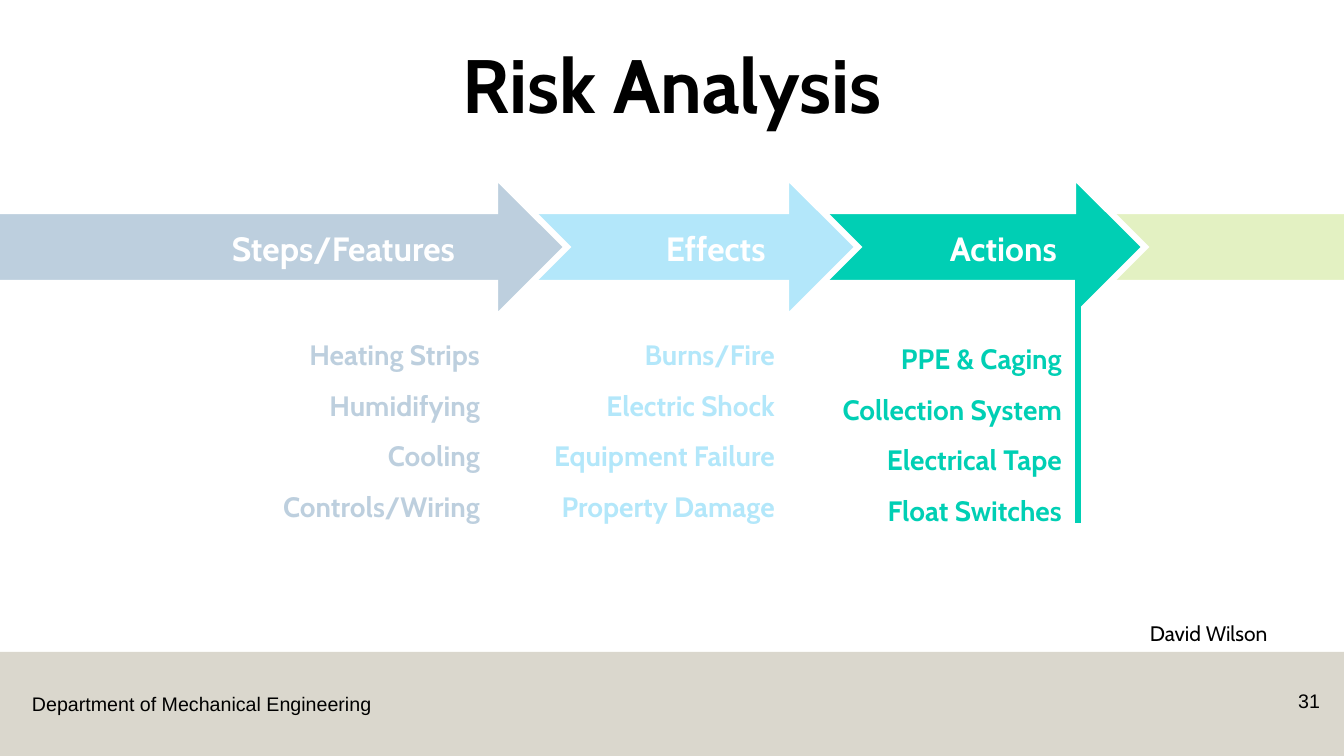
from lxml.etree import SubElement
from pptx import Presentation
from pptx.dml.color import RGBColor
from pptx.enum.shapes import MSO_CONNECTOR, MSO_SHAPE
from pptx.enum.text import MSO_ANCHOR, MSO_AUTO_SIZE, PP_ALIGN
from pptx.oxml.ns import qn
from pptx.util import Emu, Pt

NAVY, BLUE, TEAL, LIME = "236192", "00B0F0", "00CFB4", "A4D233"
WHITE, BLACK, STONE = "FFFFFF", "000000", "B7B09C"
TITLE = "Risk Analysis"

# Arrows and white veils, back to front: left, width, colour, opacity
ARROWS = [
    (879, 582, LIME, 100),
    (722, 423, TEAL, 100),
    (368, 490, BLUE, 100),
    (526, 333, WHITE, 70),
    (-15, 582, NAVY, 100),
    (-17, 582, WHITE, 70),
]
ARROW_TOP, ARROW_HEIGHT = 175, 144
LIME_VEIL = (1104, 183, 269, 132)
LIST_VEIL = (195, 328, 588, 228)
FOOTER_BAND = (0, 652, 1344, 104)

# Placeholder index, area, colour, lines
LISTS = [
    (1, (188, 316, 302, 207), NAVY,
     ["Heating Strips", "Humidifying", "Cooling", "Controls/Wiring"]),
    (2, (505, 316, 280, 207), BLUE,
     ["Burns/Fire", "Electric Shock", "Equipment Failure", "Property Damage"]),
    (3, (770, 320, 302, 207), TEAL,
     ["PPE & Caging", "Collection System", "Electrical Tape", "Float Switches"]),
]
HEADINGS = [("Steps/Features", 222), ("Effects", 656), ("Actions", 940)]


def px(length):
    return Emu(round(length * 12192000 / 1344))


def color(value):
    return RGBColor.from_string(value)


def place(shape, area):
    shape.left, shape.top, shape.width, shape.height = map(px, area)


def style(paragraph, size, value, font="Cabin", bold=False,
          align=PP_ALIGN.LEFT, spacing=1.0):
    paragraph.alignment = align
    paragraph.line_spacing = spacing
    paragraph.space_before = paragraph.space_after = Pt(0)
    paragraph.font.name = font
    paragraph.font.size = Pt(size)
    paragraph.font.bold = bold
    paragraph.font.color.rgb = color(value)


def add_block(page, kind, area, fill, opacity=100, outline=0):
    """Add a filled shape; outline is the width of its white border in points."""
    shape = page.shapes.add_shape(kind, *map(px, area))
    shape.shadow.inherit = False
    shape.fill.solid()
    shape.fill.fore_color.rgb = color(fill)
    if opacity < 100:
        tint = shape.fill._xPr.find(".//" + qn("a:srgbClr"))
        SubElement(tint, qn("a:alpha"), val=str(opacity * 1000))
    if outline:
        shape.line.color.rgb = color(WHITE)
        shape.line.width = Pt(outline)
        SubElement(shape.line._ln, qn("a:miter"), lim="800000")
    else:
        shape.line.fill.background()


def add_text(page, text, area, size, value, **options):
    frame = page.shapes.add_textbox(*map(px, area)).text_frame
    frame.word_wrap = True
    frame.text = text
    style(frame.paragraphs[0], size, value, **options)


def fill_title(page):
    title = page.shapes.title
    place(title, (155, -8, 1034, 143))
    frame = title.text_frame
    frame.text = TITLE
    frame.auto_size = MSO_AUTO_SIZE.NONE
    frame.vertical_anchor = MSO_ANCHOR.BOTTOM
    style(frame.paragraphs[0], 54, BLACK, bold=True,
          align=PP_ALIGN.CENTER, spacing=0.9)


def fill_list(holder, area, value, lines):
    place(holder, area)
    frame = holder.text_frame
    frame.text = "\n".join(lines)
    frame.auto_size = MSO_AUTO_SIZE.NONE
    frame.vertical_anchor = MSO_ANCHOR.TOP
    for paragraph in frame.paragraphs:
        properties = paragraph._p.get_or_add_pPr()
        properties.set("marL", "0")
        properties.set("indent", "0")
        SubElement(properties, qn("a:buNone"))
        style(paragraph, 20, value, bold=True,
              align=PP_ALIGN.RIGHT, spacing=1.5)


def add_teal_rule(page):
    rule = page.shapes.add_connector(
        MSO_CONNECTOR.STRAIGHT, px(1078), px(251), px(1078), px(523))
    rule.line.color.rgb = color(TEAL)
    rule.line.width = Pt(4.5)
    SubElement(rule._element.spPr, qn("a:effectLst"))


def main():
    deck = Presentation()
    deck.slide_width, deck.slide_height = px(1344), px(756)
    page = deck.slides.add_slide(deck.slide_layouts.get_by_name("Comparison"))
    holders = {holder.placeholder_format.idx: holder
               for holder in page.placeholders}

    fill_title(page)
    for index, area, value, lines in LISTS:
        fill_list(holders[index], area, value, lines)
    spare = holders[4]._element
    spare.getparent().remove(spare)

    add_block(page, MSO_SHAPE.RECTANGLE, FOOTER_BAND, STONE, opacity=50)
    for left, width, fill, opacity in ARROWS:
        add_block(page, MSO_SHAPE.RIGHT_ARROW,
                  (left, ARROW_TOP, width, ARROW_HEIGHT), fill, opacity,
                  outline=4.5 if opacity == 100 else 0)
        if fill == LIME:
            add_block(page, MSO_SHAPE.RECTANGLE, LIME_VEIL, WHITE, 70, 1)
    add_block(page, MSO_SHAPE.RECTANGLE, LIST_VEIL, WHITE, 70, 1)
    add_teal_rule(page)

    for text, left in HEADINGS:
        add_text(page, text, (left, 223, 302, 50), 24, WHITE, bold=True)
    add_text(page, "David Wilson", (1140, 616, 200, 35), 15, BLACK)
    add_text(page, "Department of Mechanical Engineering",
             (22, 687, 400, 34), 14, BLACK, font="Arial")
    add_text(page, "31", (1252, 684, 78, 40), 14, BLACK, font="Arial",
             align=PP_ALIGN.RIGHT)
    deck.save("out.pptx")


if __name__ == "__main__":
    main()
